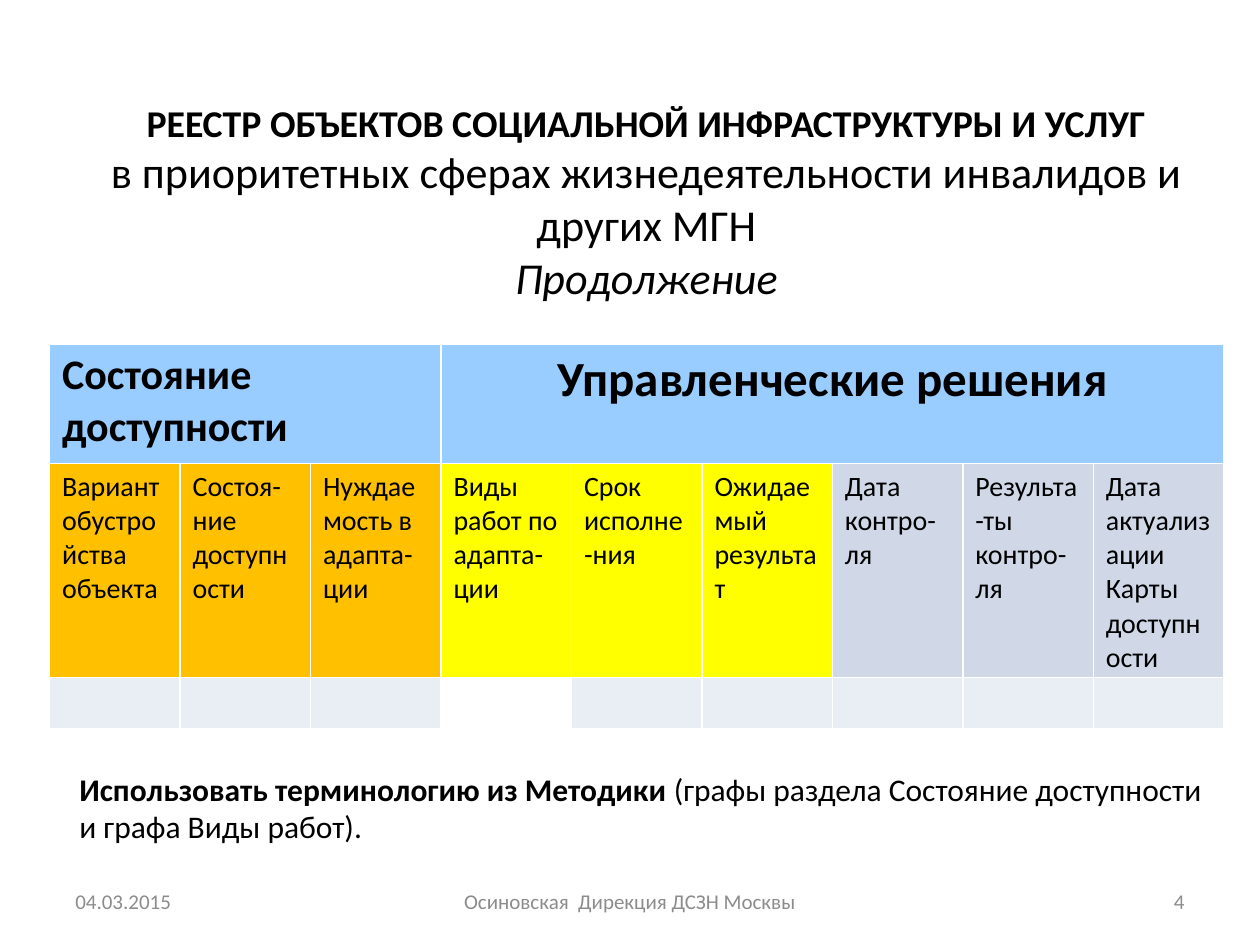
from lxml import etree
from pptx import Presentation
from pptx.dml.color import RGBColor
from pptx.enum.text import MSO_ANCHOR as Anchor, PP_ALIGN as Align
from pptx.oxml.ns import qn
from pptx.util import Cm, Pt

FONT = "Calibri"
BLACK, WHITE, GREY = "000000", "FFFFFF", "8C8C8C"
HEADER, ORANGE, YELLOW = "99CCFF", "FFC000", "FFFF00"
BAND, PALE = "D0D8E8", "E9EDF4"

GROUPS = [("Состояние доступности", 0, 2, 24, Align.LEFT),
          ("Управленческие решения", 3, 8, 28, Align.CENTER)]
COLUMNS = [
    ("Вариант обустройства объекта", ORANGE),
    ("Состоя-ние доступности", ORANGE),
    ("Нуждаемость в адапта-ции", ORANGE),
    ("Виды работ по адапта-ции", YELLOW),
    ("Срок исполне-ния", YELLOW),
    ("Ожидаемый результат", YELLOW),
    ("Дата контро-ля", BAND),
    ("Результа-ты контро-ля", BAND),
    ("Дата актуализации Карты доступности", BAND),
]
WORKS_COLUMN = 3
COLUMN_WIDTH = 2.63
ROW_HEIGHTS = (2.41, 4.32, 1.04)


def color(value):
    return RGBColor.from_string(value)


def add_run(paragraph, text, size, ink=BLACK, bold=False, italic=False):
    run = paragraph.add_run()
    run.text = text
    font = run.font
    font.name, font.size = FONT, Pt(size)
    font.bold, font.italic = bold, italic
    font.color.rgb = color(ink)


def add_text(slide, left, top, width, height, align=Align.LEFT, anchor=Anchor.MIDDLE):
    """Add a wrapping text box and return its first paragraph."""
    box = slide.shapes.add_textbox(Cm(left), Cm(top), Cm(width), Cm(height))
    frame = box.text_frame
    frame.word_wrap = True
    frame.vertical_anchor = anchor
    paragraph = frame.paragraphs[0]
    paragraph.alignment = align
    return paragraph


def style_cell(cell, fill):
    properties = cell._tc.get_or_add_tcPr()
    for side in ("lnL", "lnR", "lnT", "lnB"):
        line = etree.SubElement(properties, qn(f"a:{side}"), w=str(Pt(1)))
        solid = etree.SubElement(line, qn("a:solidFill"))
        etree.SubElement(solid, qn("a:srgbClr"), val=WHITE)
    cell.fill.solid()
    cell.fill.fore_color.rgb = color(fill)


def add_title(slide):
    title = add_text(slide, 1.6, 1.52, 22.86, 5.08, Align.CENTER)
    add_run(title, "РЕЕСТР ОБЪЕКТОВ СОЦИАЛЬНОЙ ИНФРАСТРУКТУРЫ И УСЛУГ", 21.6, bold=True)
    title.add_line_break()
    add_run(title, "в приоритетных сферах жизнедеятельности инвалидов и других МГН", 25.2)
    title.add_line_break()
    add_run(title, "Продолжение", 25.2, italic=True)


def add_register(slide):
    frame = slide.shapes.add_table(
        len(ROW_HEIGHTS), len(COLUMNS), Cm(1), Cm(6.93),
        Cm(COLUMN_WIDTH * len(COLUMNS)), Cm(sum(ROW_HEIGHTS)))
    table = frame.table
    table.first_row = table.horz_banding = False
    for column in table.columns:
        column.width = Cm(COLUMN_WIDTH)
    for row, height in zip(table.rows, ROW_HEIGHTS):
        row.height = Cm(height)

    # Column names and the empty entry row
    for index, (name, fill) in enumerate(COLUMNS):
        style_cell(table.cell(0, index), HEADER)
        style_cell(table.cell(1, index), fill)
        style_cell(table.cell(2, index), WHITE if index == WORKS_COLUMN else PALE)
        add_run(table.cell(1, index).text_frame.paragraphs[0], name, 16)

    # Merged group headings
    for name, first, last, size, align in GROUPS:
        cell = table.cell(0, first)
        cell.merge(table.cell(0, last))
        paragraph = cell.text_frame.paragraphs[0]
        paragraph.alignment = align
        add_run(paragraph, name, size, bold=True)


def add_note(slide):
    note = add_text(slide, 1.35, 15.39, 23.37, 1.8, anchor=Anchor.TOP)
    add_run(note, "Использовать терминологию из Методики ", 18, bold=True)
    add_run(note, "(графы раздела Состояние доступности и графа Виды работ).", 18)


def add_footer(slide):
    for text, left, width, align in (
            ("04.03.2015", 1.27, 5.93, Align.LEFT),
            ("Осиновская  Дирекция ДСЗН Москвы", 8.68, 8.04, Align.CENTER),
            ("4", 18.2, 5.93, Align.RIGHT)):
        add_run(add_text(slide, left, 17.65, width, 1.02, align), text, 12, GREY)


def main():
    presentation = Presentation()
    presentation.slide_width, presentation.slide_height = Cm(25.4), Cm(19.05)
    slide = presentation.slides.add_slide(presentation.slide_layouts[6])
    add_title(slide)
    add_register(slide)
    add_note(slide)
    add_footer(slide)
    presentation.save("out.pptx")


if __name__ == "__main__":
    main()
